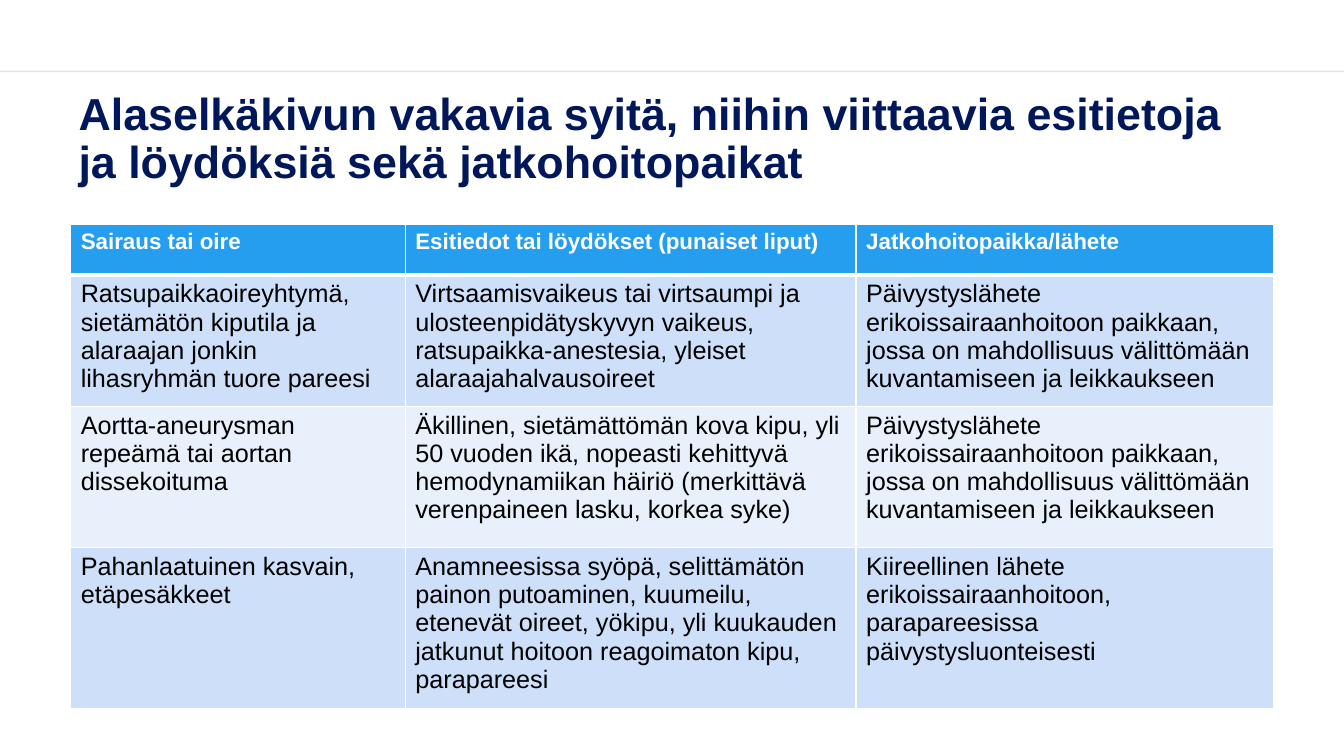
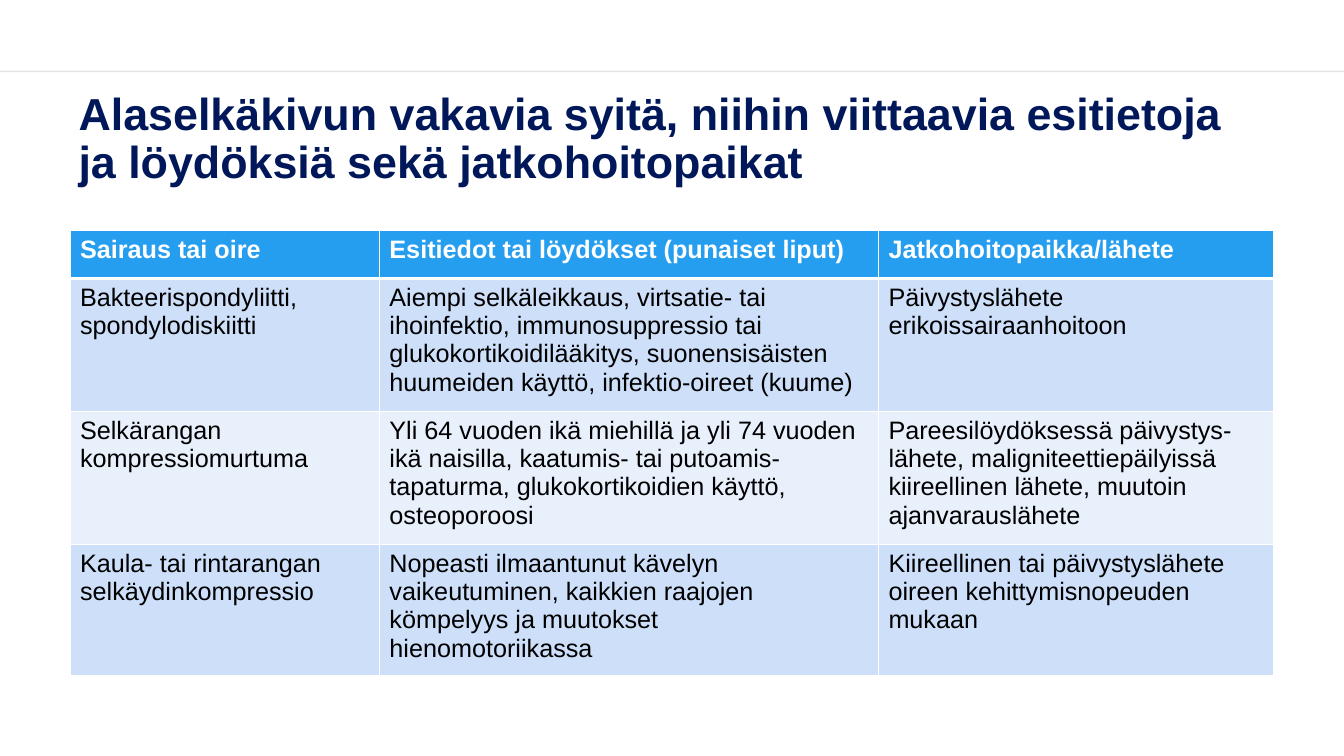
from lxml.etree import SubElement
from pptx import Presentation
from pptx.dml.color import RGBColor
from pptx.enum.shapes import MSO_CONNECTOR
from pptx.enum.text import MSO_ANCHOR
from pptx.oxml import parse_xml
from pptx.oxml.ns import nsdecls, qn
from pptx.util import Pt

NAVY = RGBColor(0x00, 0x17, 0x59)
HEADER_BLUE = RGBColor(0x26, 0x9E, 0xEF)
BAND_BLUE = RGBColor(0xCD, 0xDF, 0xF9)
BAND_PALE = RGBColor(0xE8, 0xF0, 0xFC)
BLACK = RGBColor(0x00, 0x00, 0x00)
WHITE = RGBColor(0xFF, 0xFF, 0xFF)

FONT = "Arial"
SLIDE_WIDTH, SLIDE_HEIGHT = 960, 540
RULE_TOP = 51
TITLE_BOX = (49, 67, 860, 65.5)
BODY_SIZE = 18

TITLE = ("Alaselkäkivun vakavia syitä, niihin viittaavia esitietoja "
         "ja löydöksiä sekä jatkohoitopaikat")
HEADINGS = ("Sairaus tai oire", "Esitiedot tai löydökset (punaiset liput)",
            "Jatkohoitopaikka/lähete")
IMAGING_REFERRAL = ("Päivystyslähete erikoissairaanhoitoon paikkaan, jossa on "
                    "mahdollisuus välittömään kuvantamiseen ja leikkaukseen")

CAUSE_TABLES = [
    {
        "corner": (50.5, 160),
        "widths": (239, 322, 298.5),
        "heights": (36.5, 88, 101, 108),
        "heading_size": 16,
        "causes": [
            ("Ratsupaikkaoireyhtymä, sietämätön kiputila ja alaraajan jonkin "
             "lihasryhmän tuore pareesi",
             "Virtsaamisvaikeus tai virtsaumpi ja ulosteenpidätyskyvyn vaikeus, "
             "ratsupaikka-anestesia, yleiset alaraajahalvausoireet",
             IMAGING_REFERRAL),
            ("Aortta-aneurysman repeämä tai aortan dissekoituma",
             "Äkillinen, sietämättömän kova kipu, yli 50 vuoden ikä, nopeasti "
             "kehittyvä hemodynamiikan häiriö (merkittävä verenpaineen lasku, "
             "korkea syke)",
             IMAGING_REFERRAL),
            ("Pahanlaatuinen kasvain, etäpesäkkeet",
             "Anamneesissa syöpä, selittämätön painon putoaminen, kuumeilu, "
             "etenevät oireet, yökipu, yli kuukauden jatkunut hoitoon "
             "reagoimaton kipu, parapareesi",
             "Kiireellinen lähete erikoissairaanhoitoon, parapareesissa "
             "päivystysluonteisesti"),
        ],
    },
    {
        "corner": (50, 164.5),
        "widths": (221, 356.5, 282),
        "heights": (34.5, 95, 95, 73),
        "heading_size": 18,
        "causes": [
            ("Bakteerispondyliitti, spondylodiskiitti",
             "Aiempi selkäleikkaus, virtsatie- tai ihoinfektio, "
             "immunosuppressio tai glukokortikoidilääkitys, suonensisäisten "
             "huumeiden käyttö, infektio-oireet (kuume)",
             "Päivystyslähete erikoissairaanhoitoon"),
            ("Selkärangan kompressiomurtuma",
             "Yli 64 vuoden ikä miehillä ja yli 74 vuoden ikä naisilla, "
             "kaatumis- tai putoamis-tapaturma, glukokortikoidien käyttö, "
             "osteoporoosi",
             "Pareesilöydöksessä päivystys-lähete, maligniteettiepäilyissä "
             "kiireellinen lähete, muutoin ajanvarauslähete"),
            ("Kaula- tai rintarangan selkäydinkompressio",
             "Nopeasti ilmaantunut kävelyn vaikeutuminen, kaikkien raajojen "
             "kömpelyys ja muutokset hienomotoriikassa",
             "Kiireellinen tai päivystyslähete oireen kehittymisnopeuden "
             "mukaan"),
        ],
    },
]


def style_text(paragraph, size, color, bold):
    font = paragraph.font
    font.name = FONT
    font.size = Pt(size)
    font.bold = bold
    font.color.rgb = color


def add_top_rule(slide, top):
    rule = slide.shapes.add_connector(
        MSO_CONNECTOR.STRAIGHT, 0, Pt(top), Pt(SLIDE_WIDTH), Pt(top))
    rule.line.width = Pt(1)
    rule.line.color.rgb = BLACK
    properties = rule._element.spPr
    tint = properties.find(".//" + qn("a:srgbClr"))
    SubElement(tint, qn("a:alpha"), val="10000")
    SubElement(properties, qn("a:effectLst"))


def add_title(slide, box):
    title = slide.shapes.add_textbox(*map(Pt, box)).text_frame
    title.word_wrap = True
    title.vertical_anchor = MSO_ANCHOR.MIDDLE
    title.text = TITLE
    heading = title.paragraphs[0]
    heading.line_spacing = 0.9
    style_text(heading, 32, NAVY, True)


def set_borders(cell, top, bottom):
    properties = cell._tc.get_or_add_tcPr()
    sides = {"lnL": 1, "lnR": 1, "lnT": top, "lnB": bottom}
    for position, (side, width) in enumerate(sides.items()):
        properties.insert(position, parse_xml(
            f'<a:{side} {nsdecls("a")} w="{Pt(width)}"><a:solidFill>'
            f'<a:srgbClr val="{WHITE}"/></a:solidFill></a:{side}>'))


def add_cause_table(slide, corner, widths, heights, heading_size, causes):
    rows = [HEADINGS, *causes]
    box = (*corner, sum(widths), sum(heights))
    table = slide.shapes.add_table(
        len(rows), len(widths), *map(Pt, box)).table
    for column, width in zip(table.columns, widths):
        column.width = Pt(width)
    for row, height in zip(table.rows, heights):
        row.height = Pt(height)
    for r, texts in enumerate(rows):
        is_header = r == 0
        band = HEADER_BLUE if is_header else (BAND_PALE, BAND_BLUE)[r % 2]
        size = heading_size if is_header else BODY_SIZE
        color = WHITE if is_header else BLACK
        for c, text in enumerate(texts):
            cell = table.cell(r, c)
            cell.text = text
            style_text(cell.text_frame.paragraphs[0], size, color, is_header)
            cell.fill.solid()
            cell.fill.fore_color.rgb = band
            set_borders(cell, 3 if r == 1 else 1, 3 if is_header else 1)


def add_cause_slide(deck, cause_table):
    slide = deck.slides.add_slide(deck.slide_layouts[6])
    add_top_rule(slide, RULE_TOP)
    add_title(slide, TITLE_BOX)
    add_cause_table(slide, **cause_table)


def main():
    deck = Presentation()
    deck.slide_width = Pt(SLIDE_WIDTH)
    deck.slide_height = Pt(SLIDE_HEIGHT)
    for cause_table in CAUSE_TABLES:
        add_cause_slide(deck, cause_table)
    deck.save("out.pptx")


if __name__ == "__main__":
    main()
